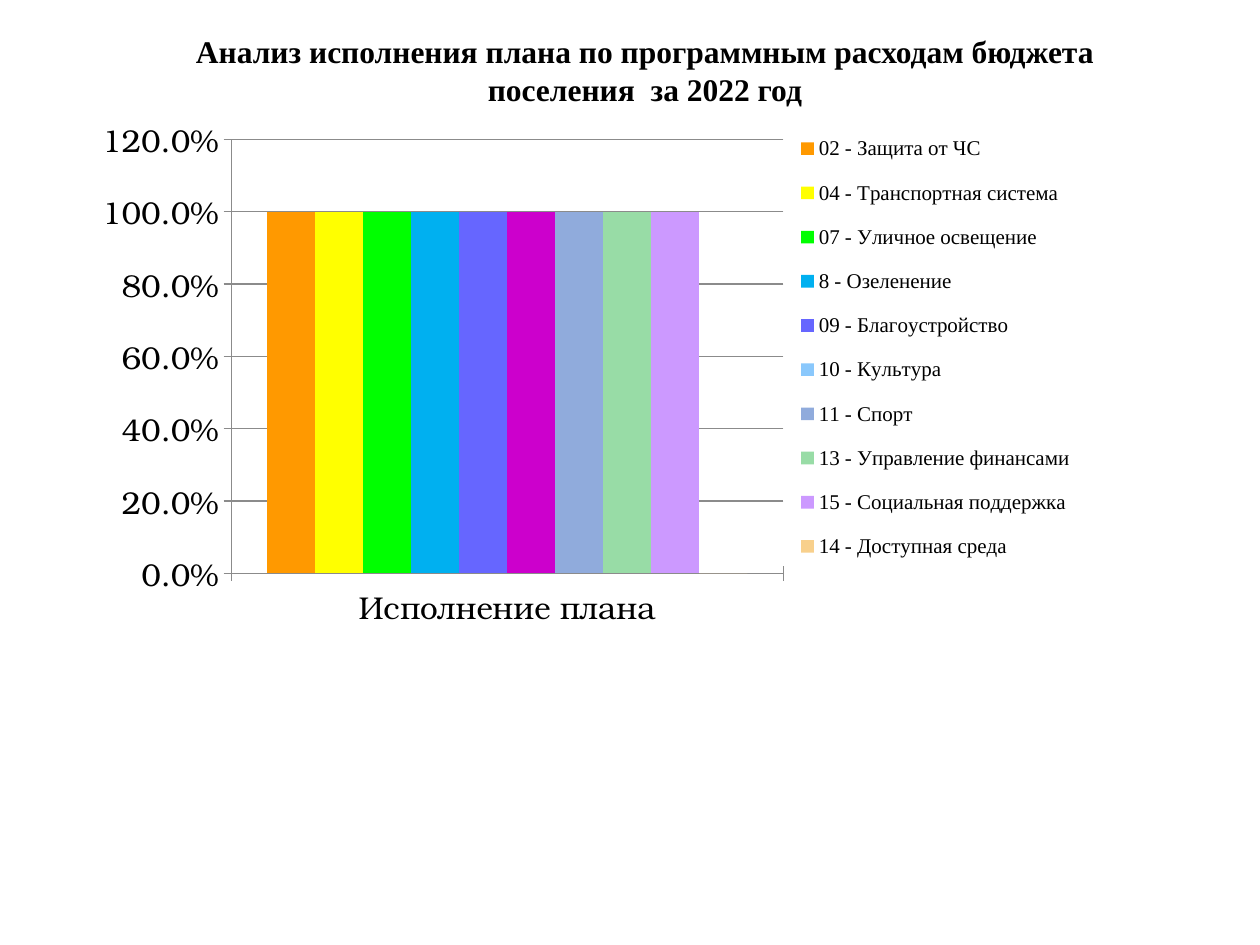
from lxml import etree
from pptx import Presentation
from pptx.chart.data import CategoryChartData
from pptx.dml.color import RGBColor
from pptx.enum.chart import XL_CHART_TYPE, XL_LEGEND_POSITION, XL_TICK_MARK
from pptx.enum.text import MSO_ANCHOR, PP_ALIGN
from pptx.oxml.ns import qn
from pptx.util import Pt

CLUSTERED = XL_CHART_TYPE.COLUMN_CLUSTERED
LEGEND_RIGHT = XL_LEGEND_POSITION.RIGHT
CROSS, NO_TICK = XL_TICK_MARK.CROSS, XL_TICK_MARK.NONE
TOP, CENTER = MSO_ANCHOR.TOP, PP_ALIGN.CENTER

BLACK = RGBColor(0x00, 0x00, 0x00)
GRAY = RGBColor(0x8B, 0x8B, 0x8B)
MAGENTA = RGBColor(0xCC, 0x00, 0xCC)
TITLE_FONT, CHART_FONT = "Times New Roman", "TeX Gyre Bonum"

TITLE = "Анализ исполнения плана по программным расходам бюджета поселения  за 2022 год"
CATEGORY = "Исполнение плана"
PROGRAMS = [  # name, share of plan, colour
    ("02 - Защита от ЧС", 1, RGBColor(0xFF, 0x99, 0x00)),
    ("04 - Транспортная система", 1, RGBColor(0xFF, 0xFF, 0x00)),
    ("07 - Уличное освещение", 1, RGBColor(0x00, 0xFF, 0x00)),
    ("8 - Озеленение", 1, RGBColor(0x00, 0xB0, 0xF0)),
    ("09 - Благоустройство", 1, RGBColor(0x66, 0x66, 0xFF)),
    ("10 - Культура", 1, RGBColor(0x8A, 0xC8, 0xFC)),
    ("11 - Спорт", 1, RGBColor(0x90, 0xAB, 0xDC)),
    ("13 - Управление финансами", 1, RGBColor(0x98, 0xDC, 0xA6)),
    ("15 - Социальная поддержка", 1, RGBColor(0xCC, 0x99, 0xFF)),
    ("14 - Доступная среда", 0, RGBColor(0xF8, 0xD0, 0x8C)),
]
CULTURE = 5  # its column has a colour of its own


def manual_layout(x, y, width, height, inner=False):
    """Return a chart layout element from percentages of the chart box."""
    layout = etree.Element(qn("c:layout"))
    manual = etree.SubElement(layout, qn("c:manualLayout"))
    settings = [("layoutTarget", "inner")] if inner else []
    settings += [("xMode", "edge"), ("yMode", "edge")]
    settings += zip("xywh", (part / 100 for part in (x, y, width, height)))
    for tag, value in settings:
        etree.SubElement(manual, qn(f"c:{tag}")).set("val", str(value))
    return layout


def drop_layout(element):
    for layout in element.findall(qn("c:layout")):
        element.remove(layout)


def set_font(font, name, size):
    font.name, font.size = name, Pt(size)
    font.color.rgb = BLACK


def set_line(line):
    line.color.rgb = GRAY
    line.width = Pt(0.75)


def place_title(page, left, top, width, height):
    title = page.shapes.title
    title.left, title.top, title.width, title.height = map(Pt, (left, top, width, height))
    frame = title.text_frame
    frame.text = TITLE
    frame.word_wrap = True
    frame.vertical_anchor = TOP
    para = frame.paragraphs[0]
    para.alignment = CENTER
    set_font(para.font, TITLE_FONT, 18)
    para.font.bold = True


def style_axes(chart):
    value_axis, category_axis = chart.value_axis, chart.category_axis
    for axis in (value_axis, category_axis):
        axis.major_tick_mark = CROSS
        axis.minor_tick_mark = NO_TICK
        set_line(axis.format.line)
    value_axis.minimum_scale, value_axis.maximum_scale = 0, 1.2
    value_axis.major_unit = 0.2
    value_axis.tick_labels.number_format = "0.0%"
    value_axis.tick_labels.number_format_is_linked = False
    value_axis.has_major_gridlines = True
    set_line(value_axis.major_gridlines.format.line)


def place_chart(page, left, top, width, height):
    data = CategoryChartData(number_format="0.0%")
    data.categories = [CATEGORY]
    for name, share, _ in PROGRAMS:
        data.add_series(name, [share])
    chart = page.shapes.add_chart(
        CLUSTERED, Pt(left), Pt(top), Pt(width), Pt(height), data).chart
    chart.has_title = False
    set_font(chart.font, CHART_FONT, 18)
    style_axes(chart)

    # Columns
    plot = chart.plots[0]
    plot.gap_width, plot.overlap = 150, 0
    plot.vary_by_categories = False
    for series, (_, _, color) in zip(plot.series, PROGRAMS):
        series.format.fill.solid()
        series.format.fill.fore_color.rgb = color
    culture_fill = plot.series[CULTURE].points[0].format.fill
    culture_fill.solid()
    culture_fill.fore_color.rgb = MAGENTA

    # Legend
    chart.has_legend = True
    legend = chart.legend
    legend.position = LEGEND_RIGHT
    legend.include_in_layout = False
    set_font(legend.font, TITLE_FONT, 12)

    # Fixed places of plot and legend
    plot_area = chart.element.find(f".//{qn('c:plotArea')}")
    drop_layout(plot_area)
    plot_area.insert(0, manual_layout(13.4, 4.3, 49.7, 76.7, inner=True))
    legend_element = chart.element.find(f".//{qn('c:legend')}")
    drop_layout(legend_element)
    legend_element.find(qn("c:legendPos")).addnext(
        manual_layout(63.8, 0.1, 26, 82))


def main():
    deck = Presentation()
    deck.slide_width, deck.slide_height = Pt(720), Pt(540)
    page = deck.slides.add_slide(deck.slide_layouts[5])
    place_title(page, 93.6, 14.6, 550, 51.1)
    place_chart(page, 47, 65.8, 635, 323.3)
    deck.save("out.pptx")


if __name__ == "__main__":
    main()
